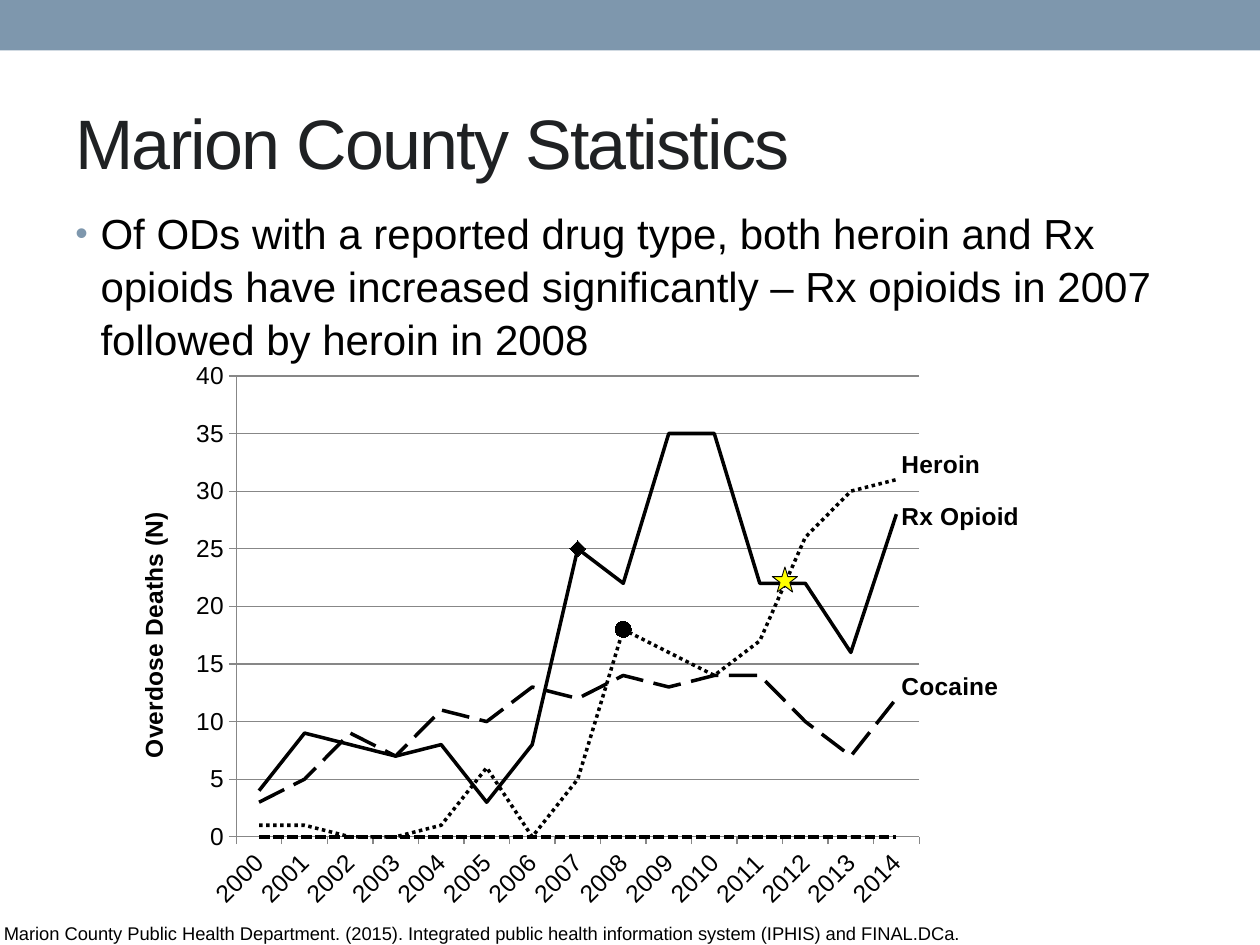
"""Build the Marion County overdose statistics slide."""
import pptx
import pptx.chart.data
import pptx.dml.color
import pptx.enum.chart
import pptx.enum.dml
import pptx.enum.shapes
import pptx.enum.text
import pptx.oxml
import pptx.oxml.ns
import pptx.util

Inches, Pt = pptx.util.Inches, pptx.util.Pt
RGB = pptx.dml.color.RGBColor
Dash = pptx.enum.dml.MSO_LINE
Mark = pptx.enum.chart.XL_MARKER_STYLE
Shape = pptx.enum.shapes.MSO_SHAPE
Anchor = pptx.enum.text.MSO_ANCHOR
qn = pptx.oxml.ns.qn

BLUE = RGB(0x7E, 0x97, 0xAD)
DARK = RGB(0x1F, 0x21, 0x23)
BLACK = RGB(0, 0, 0)
GRAY = RGB(0x87, 0x87, 0x87)
YELLOW = RGB(0xFF, 0xFF, 0)

TITLE = "Marion County Statistics"
BODY = ("Of ODs with a reported drug type, both heroin and Rx opioids have increased "
        "significantly – Rx opioids in 2007 followed by heroin in 2008")
SOURCE = ("Marion County Public Health Department. (2015). Integrated public health "
          "information system (IPHIS) and FINAL.DCa.")
YEARS = [str(year) for year in range(2000, 2015)]
SERIES = [
    {"name": "Heroin", "vals": [1, 1, 0, 0, 1, 6, 0, 5, 18, 16, 14, 17, 26, 30, 31],
     "dash": Dash.ROUND_DOT, "mark": ("2008", Mark.CIRCLE), "shift": -0.026},
    {"name": "Rx Opioid", "vals": [4, 9, 8, 7, 8, 3, 8, 25, 22, 35, 35, 22, 22, 16, 28],
     "dash": Dash.SOLID, "mark": ("2007", Mark.DIAMOND), "shift": 0.005},
    {"name": "Cocaine", "vals": [3, 5, 9, 7, 11, 10, 13, 12, 14, 13, 14, 14, 10, 7, 12],
     "dash": Dash.LONG_DASH, "shift": -0.02},
    {"name": "Series 4", "vals": [0] * len(YEARS), "dash": Dash.SQUARE_DOT},
]
PLOT = {"x": 0.119, "y": 0.052, "w": 0.661, "h": 0.813}


def put(obj, **vals):
    for key, val in vals.items():
        setattr(obj, key, val)


def style(font, size, color=BLACK, bold=False):
    put(font, name="Arial", size=Pt(size), bold=bold)
    font.color.rgb = color


def paint(line, width, color=BLACK):
    line.color.rgb = color
    line.width = Pt(width)


def layout(**vals):
    tags = "".join(f'<c:{key} val="{val}"/>' for key, val in vals.items())
    return pptx.oxml.parse_xml(
        f'<c:layout {pptx.oxml.ns.nsdecls("c")}><c:manualLayout>{tags}'
        '</c:manualLayout></c:layout>')


def write(slide, box, text, size, color=BLACK, **frame):
    area = slide.shapes.add_textbox(*map(Inches, box)).text_frame
    put(area, word_wrap=True, **frame)
    para = area.paragraphs[0]
    run = para.add_run()
    run.text = text
    style(run.font, size, color)
    return para


def bullet(para):
    put(para, space_before=Pt(4.8), space_after=Pt(6), line_spacing=1.05)
    props = para._p.get_or_add_pPr()
    put_xml = {"marL": Inches(0.2), "indent": Inches(-0.2)}
    for key, val in put_xml.items():
        props.set(key, str(val))
    space = pptx.oxml.ns.nsdecls("a")
    for xml in (f'<a:buClr {space}><a:srgbClr val="{BLUE}"/></a:buClr>',
                f'<a:buSzPct {space} val="85000"/>',
                f'<a:buFont {space} typeface="Arial"/>',
                f'<a:buChar {space} char="•"/>'):
        props.append(pptx.oxml.parse_xml(xml))


def shape(slide, kind, box, fill):
    item = slide.shapes.add_shape(kind, *map(Inches, box))
    item.shadow.inherit = False
    item.fill.solid()
    item.fill.fore_color.rgb = fill
    return item


def label(line, shift):
    line.data_labels.show_value = False
    tag = line.points[len(YEARS) - 1].data_label
    style(tag.font, 14, bold=True)
    tag.position = pptx.enum.chart.XL_LABEL_POSITION.RIGHT
    node = line._element.find(".//" + qn("c:dLbl"))
    node.find(qn("c:showVal")).set("val", "0")
    node.find(qn("c:showSerName")).set("val", "1")
    node.find(qn("c:idx")).addnext(layout(x=0, y=shift))


def trend(line, item):
    put(line, smooth=False)
    paint(line.format.line, 2)
    line.format.line.dash_style = item["dash"]
    line.marker.style = Mark.NONE
    if "mark" in item:
        year, kind = item["mark"]
        point = line.points[YEARS.index(year)]
        put(point.marker, style=kind, size=9)
        point.marker.format.fill.solid()
        point.marker.format.fill.fore_color.rgb = BLACK
        point.marker.format.line.color.rgb = BLACK
        paint(point.format.line, 2)
        point.format.line.dash_style = item["dash"]
    if "shift" in item:
        label(line, item["shift"])


def graph(slide):
    data = pptx.chart.data.CategoryChartData()
    data.categories = YEARS
    for item in SERIES:
        data.add_series(item["name"], item["vals"])
    chart = slide.shapes.add_chart(
        pptx.enum.chart.XL_CHART_TYPE.LINE, *map(Inches, (0.9, 2.75, 8.2, 4.5)), data).chart
    put(chart, has_legend=False, has_title=False)
    style(chart.font, 12)
    chart.plots[0].vary_by_categories = False
    for line, item in zip(chart.plots[0].series, SERIES):
        trend(line, item)
    years, deaths = chart.category_axis, chart.value_axis
    for axis in (years, deaths):
        axis.major_tick_mark = pptx.enum.chart.XL_TICK_MARK.OUTSIDE
        style(axis.tick_labels.font, 14)
        paint(axis.format.line, 0.75, GRAY)
    years._element.find(".//" + qn("a:bodyPr")).set("rot", "-2700000")
    put(deaths, minimum_scale=0, maximum_scale=40, major_unit=5, has_major_gridlines=True)
    put(deaths.tick_labels, number_format="#,##0", number_format_is_linked=False)
    paint(deaths.major_gridlines.format.line, 0.75, GRAY)
    head = deaths.axis_title.text_frame
    head.text = "Overdose Deaths (N)"
    style(head.paragraphs[0].runs[0].font, 14, bold=True)
    area = chart._chartSpace.find(".//" + qn("c:plotArea"))
    for old in area.findall(qn("c:layout")):
        area.remove(old)
    area.insert(0, layout(layoutTarget="inner", xMode="edge", yMode="edge", **PLOT))


def main():
    deck = pptx.Presentation()
    put(deck, slide_width=Inches(10), slide_height=Inches(7.5))
    slide = deck.slides.add_slide(deck.slide_layouts[6])
    shape(slide, Shape.RECTANGLE, (0, 0, 10, 0.4), BLUE).line.fill.background()
    title = write(slide, (0.5, 0.58, 7.92, 1.08), TITLE, 40, DARK,
                  vertical_anchor=Anchor.MIDDLE)
    title.runs[0].font._element.set("spc", "-100")
    bullet(write(slide, (0.5, 1.58, 9, 5.5), BODY, 24))
    write(slide, (0.03, 7.32, 9.89, 0.18), SOURCE, 10.5,
          margin_left=0, margin_top=0, margin_right=0, margin_bottom=0)
    graph(slide)
    star = shape(slide, Shape.STAR_5_POINT, (6.13, 4.5, 0.2, 0.2), YELLOW)
    paint(star.line, 0.5)
    deck.save("out.pptx")


if __name__ == "__main__":
    main()
